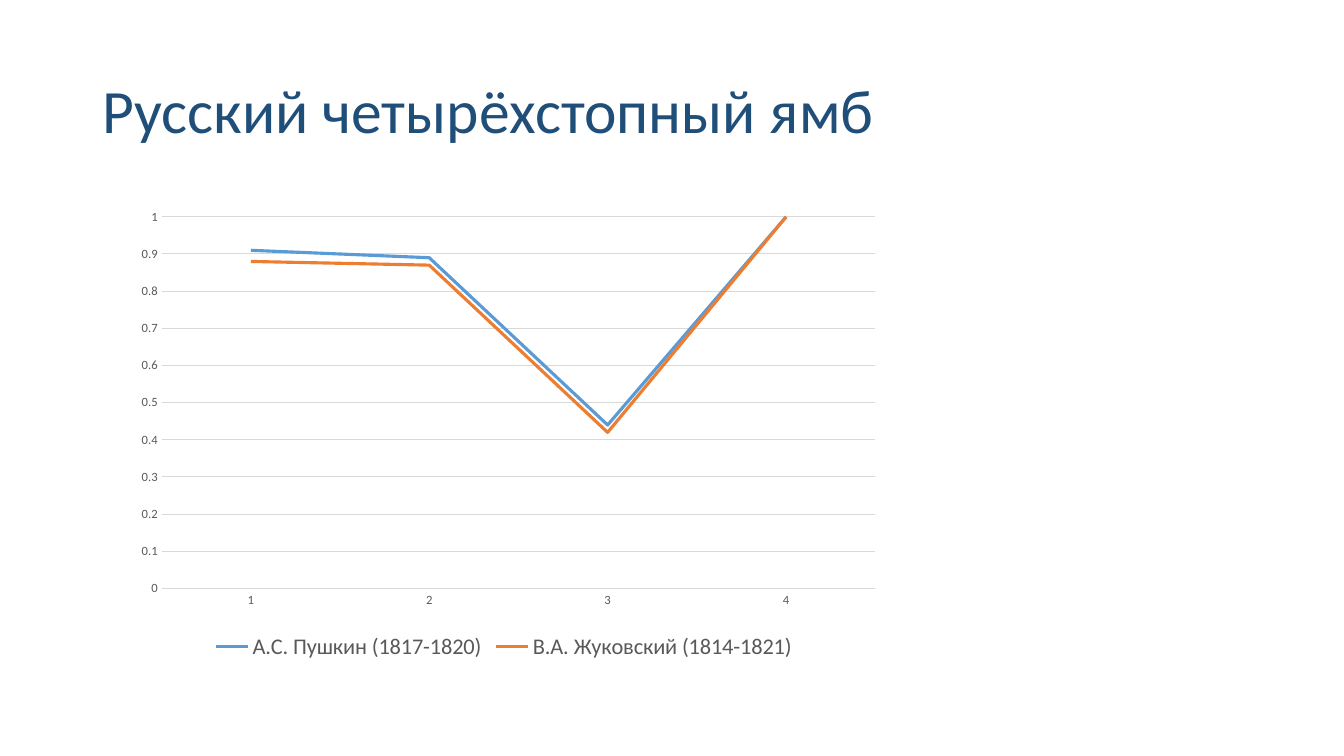
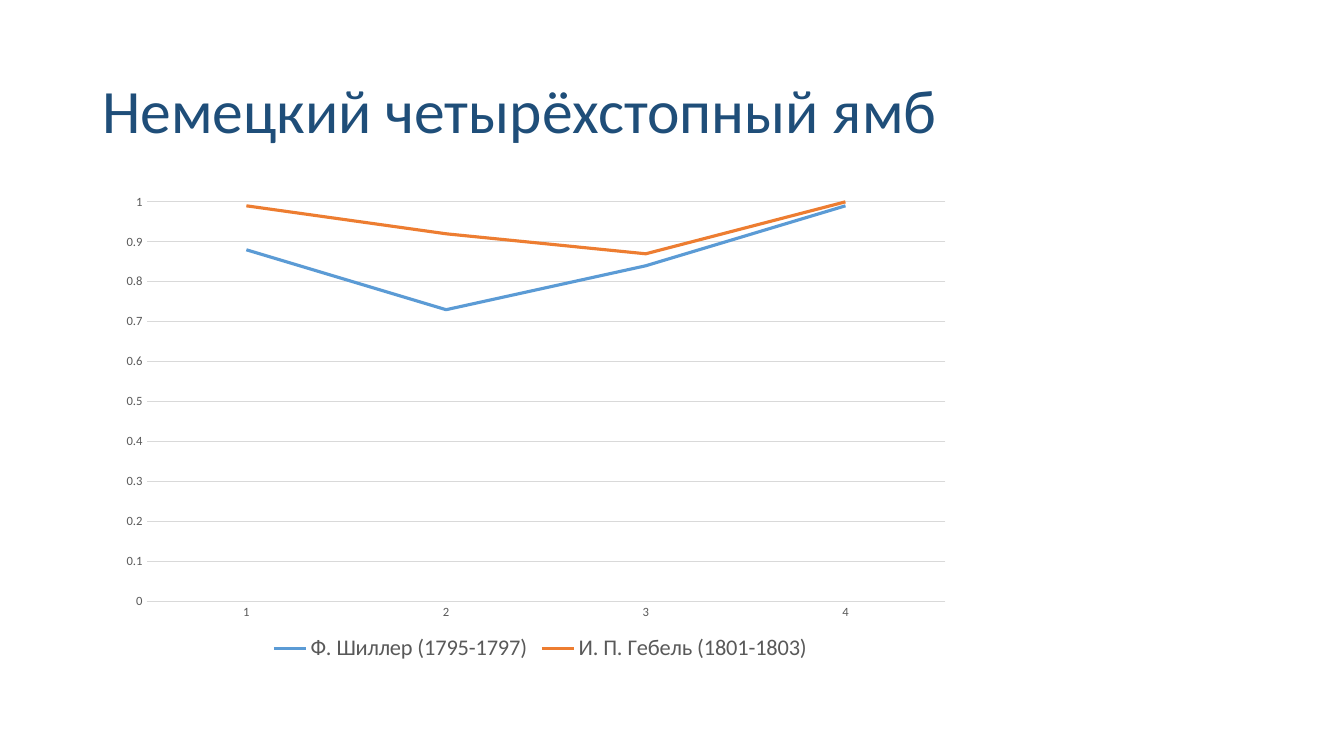
"""Build two slides that compare the stress profiles of iambic tetrameter."""
from dataclasses import dataclass
from typing import Any

import pptx
import pptx.chart.axis
import pptx.chart.chart
import pptx.chart.data
import pptx.dml.color
import pptx.enum.chart
import pptx.enum.text
import pptx.oxml
import pptx.oxml.ns
import pptx.presentation
import pptx.slide
import pptx.util

Cm = pptx.util.Cm
Pt = pptx.util.Pt
RGBColor = pptx.dml.color.RGBColor

NAVY = RGBColor(0x1F, 0x4E, 0x79)
GREY = RGBColor(0x59, 0x59, 0x59)
RULE = RGBColor(0xD9, 0xD9, 0xD9)
BLUE = RGBColor(0x5B, 0x9B, 0xD5)
ORANGE = RGBColor(0xED, 0x7D, 0x31)
FONT = "Calibri"
FEET = ("1", "2", "3", "4")
TITLE_BOX = {"left": Cm(2.33), "top": Cm(1.01), "width": Cm(29.21), "height": Cm(3.68)}
TITLE_FRAME = {
    "word_wrap": True,
    "auto_size": pptx.enum.text.MSO_AUTO_SIZE.NONE,
    "vertical_anchor": pptx.enum.text.MSO_ANCHOR.MIDDLE,
}
TITLE_PARAGRAPH = {"alignment": pptx.enum.text.PP_ALIGN.LEFT, "line_spacing": 0.9}
AXIS = {
    "major_tick_mark": pptx.enum.chart.XL_TICK_MARK.NONE,
    "minor_tick_mark": pptx.enum.chart.XL_TICK_MARK.NONE,
}
SCALE = {"minimum_scale": 0, "maximum_scale": 1, "major_unit": 0.1, "has_major_gridlines": True}
LEGEND = {"position": pptx.enum.chart.XL_LEGEND_POSITION.BOTTOM, "include_in_layout": False}


@dataclass(frozen=True)
class Poet:
    """One line of a chart."""
    name: str
    stresses: tuple[float, ...]
    color: RGBColor


@dataclass(frozen=True)
class Profile:
    """One slide: title, chart box in centimetres, plot fractions and poets."""
    title: str
    box: tuple[float, float, float, float]
    plot: tuple[float, float, float, float]
    poets: tuple[Poet, ...]


PROFILES = (
    Profile(
        "Русский четырёхстопный ямб",
        (3.05, 5.08, 19.3, 11.68),
        (0.053, 0.033, 0.932, 0.802),
        (
            Poet("А.С. Пушкин (1817-1820)", (0.91, 0.89, 0.44, 1), BLUE),
            Poet("В.А. Жуковский (1814-1821)", (0.88, 0.87, 0.42, 1), ORANGE),
        ),
    ),
    Profile(
        "Немецкий четырёхстопный ямб",
        (2.9, 4.7, 21.44, 12.09),
        (0.037, 0.032, 0.939, 0.833),
        (
            Poet("Ф. Шиллер (1795-1797)", (0.88, 0.73, 0.84, 0.99), BLUE),
            Poet("И. П. Гебель (1801-1803)", (0.99, 0.92, 0.87, 1), ORANGE),
        ),
    ),
)


def apply(target: Any, values: dict[str, Any]) -> None:
    """Set every attribute in values on the target."""
    for name, value in values.items():
        setattr(target, name, value)


def style_font(font: Any, size: float, color: RGBColor) -> None:
    """Give a font the shared typeface, a size and a colour."""
    apply(font, {"name": FONT, "size": Pt(size)})
    font.color.rgb = color


def style_line(line: Any, width: float, color: RGBColor) -> None:
    """Give a line a width and a colour."""
    line.width = Pt(width)
    line.color.rgb = color


def add_title(s: pptx.slide.Slide, text: str) -> None:
    """Fill and format the title placeholder."""
    sp = s.shapes.title
    apply(sp, TITLE_BOX)
    tf = sp.text_frame
    apply(tf, TITLE_FRAME)
    p = tf.paragraphs[0]
    apply(p, TITLE_PARAGRAPH)
    r = p.add_run()
    r.text = text
    style_font(r.font, 44, NAVY)


def place_plot(chart: pptx.chart.chart.Chart, plot: tuple[float, ...]) -> None:
    """Fix the inner plot area at fractions of the chart."""
    area = chart._chartSpace.chart.plotArea
    for old in area.findall(pptx.oxml.ns.qn("c:layout")):
        area.remove(old)
    fields = [("layoutTarget", "inner"), ("xMode", "edge"), ("yMode", "edge")]
    fields += zip("xywh", plot)
    xml = "".join(f'<c:{name} val="{value}"/>' for name, value in fields)
    layout = pptx.oxml.parse_xml(
        f'<c:layout {pptx.oxml.ns.nsdecls("c")}><c:manualLayout>{xml}</c:manualLayout></c:layout>'
    )
    area.insert(0, layout)


def add_profile_chart(s: pptx.slide.Slide, profile: Profile) -> None:
    """Draw the line chart of a profile."""
    data = pptx.chart.data.CategoryChartData()
    data.categories = FEET
    for poet in profile.poets:
        data.add_series(poet.name, poet.stresses)
    box = (Cm(length) for length in profile.box)
    chart = s.shapes.add_chart(pptx.enum.chart.XL_CHART_TYPE.LINE, *box, data).chart
    apply(chart, {"has_title": False, "has_legend": True})
    apply(chart.font, {"name": FONT, "size": Pt(10)})
    apply(chart.legend, LEGEND)
    style_font(chart.legend.font, 16, GREY)
    for axis in (chart.category_axis, chart.value_axis):
        apply(axis, AXIS)
        style_font(axis.tick_labels.font, 9, GREY)
    apply(chart.value_axis, SCALE)
    chart.value_axis.format.line.fill.background()
    for line in (chart.category_axis.format.line, chart.value_axis.major_gridlines.format.line):
        style_line(line, 0.75, RULE)
    chart.plots[0].vary_by_categories = False
    for series, poet in zip(chart.plots[0].series, profile.poets):
        series.smooth = False
        style_line(series.format.line, 2.25, poet.color)
    place_plot(chart, profile.plot)


def add_profile(prs: pptx.presentation.Presentation, profile: Profile) -> None:
    """Add the slide of one profile."""
    s = prs.slides.add_slide(prs.slide_layouts.get_by_name("Title Only"))
    add_title(s, profile.title)
    add_profile_chart(s, profile)


def main() -> None:
    """Build and save the presentation."""
    prs = pptx.Presentation()
    apply(prs, {"slide_width": Cm(33.87), "slide_height": Cm(19.05)})
    for profile in PROFILES:
        add_profile(prs, profile)
    prs.save("out.pptx")


if __name__ == "__main__":
    main()
